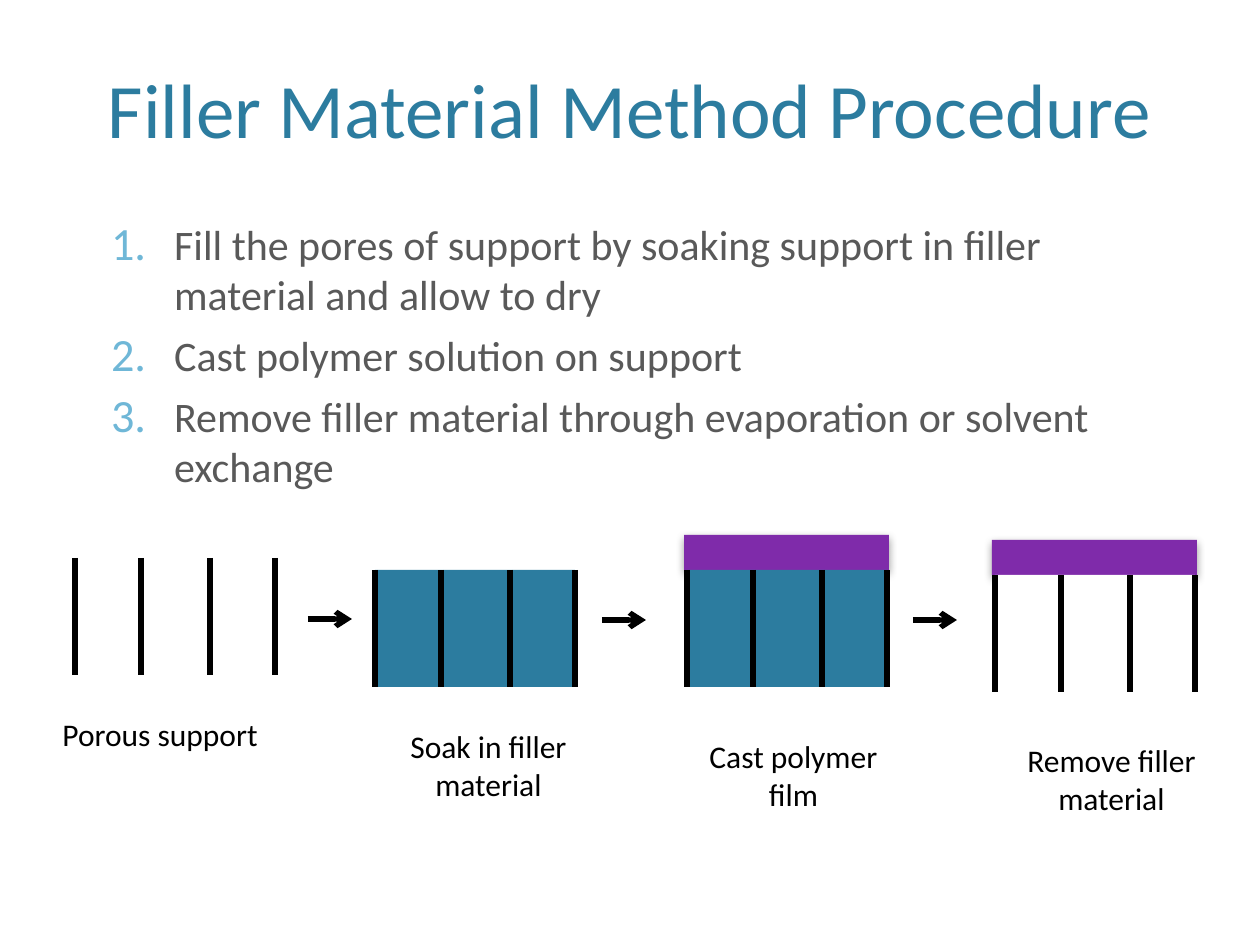
from lxml import etree
from pptx import Presentation, util as u
from pptx.dml.color import RGBColor
from pptx.enum import shapes, text
from pptx.oxml.ns import qn

SCALE = 914400 / 126
BLUE, PURPLE, WHITE, BLACK = "2C7C9F", "7F2BAA", "FFFFFF", "000000"
GRAY, PALE = "595959", "6FB7D7"

TITLE = "Filler Material Method Procedure"
STEPS = [
    "Fill the pores of support by soaking support in filler material and allow to dry",
    "Cast polymer solution on support",
    "Remove filler material through evaporation or solvent exchange",
]
STAGES = [
    dict(left=75, top=558, fill=None, film=False),
    dict(left=375, top=570, fill=BLUE, film=False),
    dict(left=687, top=570, fill=BLUE, film=True),
    dict(left=995, top=575, fill=WHITE, film=True),
]
CAPTIONS = [
    ("Porous support", (50, 709, 258, 50), "LEFT"),
    ("Soak in filler material", (375, 721, 227, 89), "CENTER"),
    ("Cast polymer film", (674, 731, 239, 89), "CENTER"),
    ("Remove filler material", (993, 735, 237, 89), "CENTER"),
]
ARROWS = [(308, 619), (602, 620), (913, 620)]
ARROW_LENGTH = 44
WALLS = (0, 66, 135, 200)
STAGE_WIDTH, STAGE_HEIGHT = 200, 117
FILM_WIDTH, FILM_HEIGHT, FILM_OVERHANG = 205, 35, 3


def px(*lengths):
    return [round(length * SCALE) for length in lengths]


def color(value):
    return RGBColor.from_string(value)


def apply(target, **values):
    for name, value in values.items():
        setattr(target, name, value)


def child(parent, tag, **attributes):
    return etree.SubElement(parent, qn(tag), attributes)


def write(para, words, size, shade):
    span = para.add_run()
    span.text = words
    apply(span.font, name="Calibri", size=u.Pt(size))
    span.font.color.rgb = color(shade)


def place(box, area):
    apply(box, **dict(zip(("left", "top", "width", "height"), px(*area))))


def add_line(page, start, end, arrow=False):
    line = page.shapes.add_connector(shapes.MSO_CONNECTOR.STRAIGHT, *px(*start, *end))
    line.line.width = u.Pt(3)
    line.line.color.rgb = color(BLACK)
    if arrow:
        child(line.line._get_or_add_ln(), "a:tailEnd", type="arrow")
    child(line._element.spPr, "a:effectLst")


def add_block(page, area, fill):
    block = page.shapes.add_shape(shapes.MSO_SHAPE.RECTANGLE, *px(*area))
    block.shadow.inherit = False
    block.fill.solid()
    block.fill.fore_color.rgb = color(fill)
    block.line.fill.background()
    return block


def add_film(page, left, top):
    area = (left - FILM_OVERHANG, top - FILM_HEIGHT, FILM_WIDTH, FILM_HEIGHT)
    film = add_block(page, area, PURPLE)
    effects = film._element.spPr.find(qn("a:effectLst"))
    shadow = child(effects, "a:outerShdw", blurRad=str(u.Pt(5)), dist=str(u.Pt(2)),
                   dir="5400000", rotWithShape="0")
    child(child(shadow, "a:srgbClr", val=BLACK), "a:alpha", val="40000")


def add_stage(page, left, top, fill, film):
    if film:
        add_film(page, left, top)
    if fill:
        add_block(page, (left, top, STAGE_WIDTH, STAGE_HEIGHT), fill)
    for offset in WALLS:
        x = left + offset
        add_line(page, (x, top), (x, top + STAGE_HEIGHT))


def add_caption(page, words, area, align):
    box = page.shapes.add_textbox(*px(*area))
    box.text_frame.word_wrap = True
    para = box.text_frame.paragraphs[0]
    para.alignment = text.PP_ALIGN[align]
    write(para, words, 18, BLACK)


def fill_title(box):
    place(box, (0, -24, 1260, 184))
    apply(box.text_frame, vertical_anchor=text.MSO_ANCHOR.BOTTOM,
          auto_size=text.MSO_AUTO_SIZE.NONE)
    para = box.text_frame.paragraphs[0]
    para.alignment = text.PP_ALIGN.CENTER
    write(para, TITLE, 44, BLUE)


def fill_steps(box):
    place(box, (4, 212, 1197, 598))
    frame = box.text_frame
    frame.auto_size = text.MSO_AUTO_SIZE.NONE
    for index, step in enumerate(STEPS):
        para = frame.add_paragraph() if index else frame.paragraphs[0]
        apply(para, level=2, space_before=u.Pt(6))
        write(para, step, 24, GRAY)
        props = para._p.get_or_add_pPr()
        props.set("marL", str(u.Inches(1.25)))
        props.set("indent", str(u.Inches(-0.5)))
        child(child(props, "a:buClr"), "a:srgbClr", val=PALE)
        child(props, "a:buSzPct", val="110000")
        child(props, "a:buFont", typeface="+mj-lt")
        child(props, "a:buAutoNum", type="arabicPeriod")


def main():
    deck = Presentation()
    apply(deck, slide_width=u.Inches(10), slide_height=u.Inches(7.5))
    page = deck.slides.add_slide(deck.slide_layouts[1])
    fill_title(page.shapes.title)
    fill_steps(page.placeholders[1])
    for stage in STAGES:
        add_stage(page, **stage)
    for caption in CAPTIONS:
        add_caption(page, *caption)
    for x, y in ARROWS:
        add_line(page, (x, y), (x + ARROW_LENGTH, y), arrow=True)
    deck.save("out.pptx")


if __name__ == "__main__":
    main()
